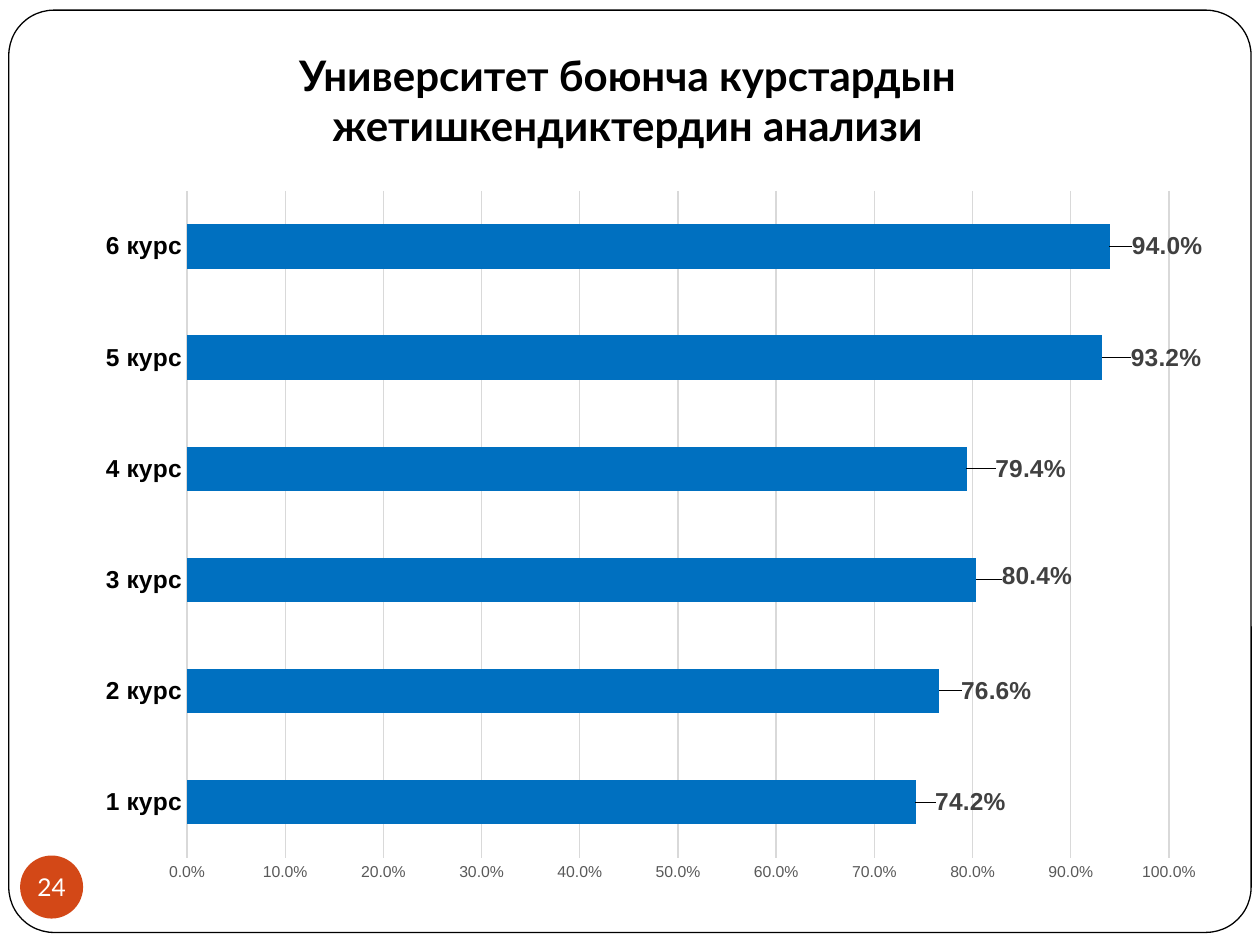
"""Build a slide that compares student achievement by year of study."""
from dataclasses import dataclass

from lxml.etree import SubElement
from pptx import Presentation
from pptx.chart.data import CategoryChartData
from pptx.dml.color import RGBColor
from pptx.enum.chart import XL_CHART_TYPE, XL_LABEL_POSITION, XL_TICK_MARK
from pptx.enum.shapes import MSO_SHAPE
from pptx.enum.text import MSO_ANCHOR, MSO_AUTO_SIZE, PP_ALIGN
from pptx.oxml.ns import qn
from pptx.util import Inches, Pt


@dataclass(frozen=True)
class Theme:
    """Colours, fonts and type sizes."""
    white: str = "FFFFFF"
    ink: str = "000000"
    badge: str = "D34817"
    bar: str = "0070C0"
    grid: str = "D9D9D9"
    tick: str = "595959"
    value: str = "404040"
    heading_font: str = "Lato"
    chart_font: str = "Arial"
    title_size: int = 24
    label_size: int = 14
    tick_size: int = 9
    chart_size: int = 10
    line: float = 0.75


THEME = Theme()
TITLE = "Университет боюнча курстардын\vжетишкендиктердин анализи"
PAGE = "24"
COURSES = [
    ("1 курс", 0.742, (0.013, 0)),
    ("2 курс", 0.766, (0.015, 0)),
    ("3 курс", 0.804, (0.018, -0.006)),
    ("4 курс", 0.794, (0.021, 0)),
    ("5 курс", 0.932, (0.021, 0)),
    ("6 курс", 0.94, (0.015, 0)),
]
WIDTH, HEIGHT = Inches(10), Inches(7.5)
AREAS = {
    "frame": (0.7, 1.07, 98.6, 97.6),
    "title": (1.6, 3.6, 96.4, 13.6),
    "badge": (1.6, 90.53, 5, 6.67),
    "chart": (6.6, 18.8, 90.1, 76.13),
}
PLOT = {"x": 0.0915, "y": 0.0185, "w": 0.865, "h": 0.927}


def area(part):
    """Turn percentages of the slide into lengths."""
    sides = (WIDTH, HEIGHT, WIDTH, HEIGHT)
    return [int(side * share / 100) for side, share in zip(sides, AREAS[part])]


def style(font, size, color, face, bold=False):
    """Format a font."""
    font.size, font.name, font.bold = Pt(size), face, bold
    font.color.rgb = RGBColor.from_string(color)


def write(frame, text, size, color, anchor, insets, bold=False):
    """Fill a text frame with one centred paragraph."""
    frame.text = text
    frame.word_wrap = True
    frame.auto_size = MSO_AUTO_SIZE.NONE
    frame.vertical_anchor = anchor
    (frame.margin_left, frame.margin_top,
     frame.margin_right, frame.margin_bottom) = map(Inches, insets)
    paragraph = frame.paragraphs[0]
    paragraph.alignment = PP_ALIGN.CENTER
    for run in paragraph.runs:
        style(run.font, size, color, THEME.heading_font, bold)


def add_panel(slide, preset, part, fill):
    """Add a flat filled shape."""
    panel = slide.shapes.add_shape(preset, *area(part))
    panel.shadow.inherit = False
    panel.fill.solid()
    panel.fill.fore_color.rgb = RGBColor.from_string(fill)
    panel.line.fill.background()
    return panel


def set_layout(layout, settings):
    """Write a manual chart layout."""
    manual = SubElement(layout, qn("c:manualLayout"))
    for name, setting in settings.items():
        SubElement(manual, qn(f"c:{name}")).set("val", str(setting))


def add_achievement_chart(slide):
    """Add the bar chart with its shifted value labels."""
    achievement = CategoryChartData(number_format="0.0%")
    achievement.categories = [course for course, _, _ in COURSES]
    achievement.add_series("Series 1", [share for _, share, _ in COURSES])
    chart = slide.shapes.add_chart(
        XL_CHART_TYPE.BAR_CLUSTERED, *area("chart"), achievement).chart
    chart.has_legend = chart.has_title = False
    style(chart.font, THEME.chart_size, THEME.ink, THEME.chart_font)

    courses, shares = chart.category_axis, chart.value_axis
    for axis in (courses, shares):
        axis.major_tick_mark = axis.minor_tick_mark = XL_TICK_MARK.NONE
        axis.format.line.fill.background()
    style(courses.tick_labels.font, THEME.label_size, THEME.ink, THEME.chart_font, True)
    style(shares.tick_labels.font, THEME.tick_size, THEME.tick, THEME.chart_font)
    shares.minimum_scale, shares.maximum_scale, shares.major_unit = 0, 1, 0.1
    shares.tick_labels.number_format = "0.0%"
    shares.tick_labels.number_format_is_linked = False
    shares.has_major_gridlines = True
    gridline = shares.major_gridlines.format.line
    gridline.width = Pt(THEME.line)
    gridline.color.rgb = RGBColor.from_string(THEME.grid)

    plot = chart.plots[0]
    plot.gap_width, plot.vary_by_categories = 150, False
    bars = plot.series[0]
    bars.format.fill.solid()
    bars.format.fill.fore_color.rgb = RGBColor.from_string(THEME.bar)
    labels = bars.data_labels
    labels.show_value = True
    labels.number_format, labels.number_format_is_linked = "0.0%", False
    labels.position = XL_LABEL_POSITION.OUTSIDE_END
    style(labels.font, THEME.label_size, THEME.value, THEME.chart_font, True)
    for index in range(len(COURSES)):
        label = bars.points[index].data_label
        style(label.font, THEME.label_size, THEME.value, THEME.chart_font, True)
        label.position = XL_LABEL_POSITION.OUTSIDE_END

    chart_xml = chart.element
    for label_xml, (_, _, (dx, dy)) in zip(chart_xml.iter(qn("c:dLbl")), COURSES):
        layout = label_xml.makeelement(qn("c:layout"))
        label_xml.insert(1, layout)
        set_layout(layout, {"x": dx, "y": dy})
    plot_xml = next(chart_xml.iter(qn("c:plotArea")))
    for old_layout in plot_xml.findall(qn("c:layout")):
        plot_xml.remove(old_layout)
    layout = plot_xml.makeelement(qn("c:layout"))
    plot_xml.insert(0, layout)
    set_layout(layout, {"layoutTarget": "inner", "xMode": "edge", "yMode": "edge", **PLOT})


def main():
    """Compose and save the slide."""
    deck = Presentation()
    deck.slide_width, deck.slide_height = WIDTH, HEIGHT
    slide = deck.slides.add_slide(deck.slide_layouts[5])

    frame = add_panel(slide, MSO_SHAPE.ROUNDED_RECTANGLE, "frame", THEME.white)
    frame.adjustments[0] = 0.049
    frame.line.color.rgb = RGBColor.from_string(THEME.ink)
    frame.line.width = Pt(THEME.line)

    title = slide.shapes.title
    frame.element.addnext(title.element)
    title.left, title.top, title.width, title.height = area("title")
    write(title.text_frame, TITLE, THEME.title_size, THEME.ink,
          MSO_ANCHOR.BOTTOM, (0.1, 0.05, 0.1, 0.1), True)

    badge = add_panel(slide, MSO_SHAPE.OVAL, "badge", THEME.badge)
    write(badge.text_frame, PAGE, THEME.label_size, THEME.white,
          MSO_ANCHOR.MIDDLE, (0, 0, 0, 0))
    add_achievement_chart(slide)
    deck.save("out.pptx")


if __name__ == "__main__":
    main()
